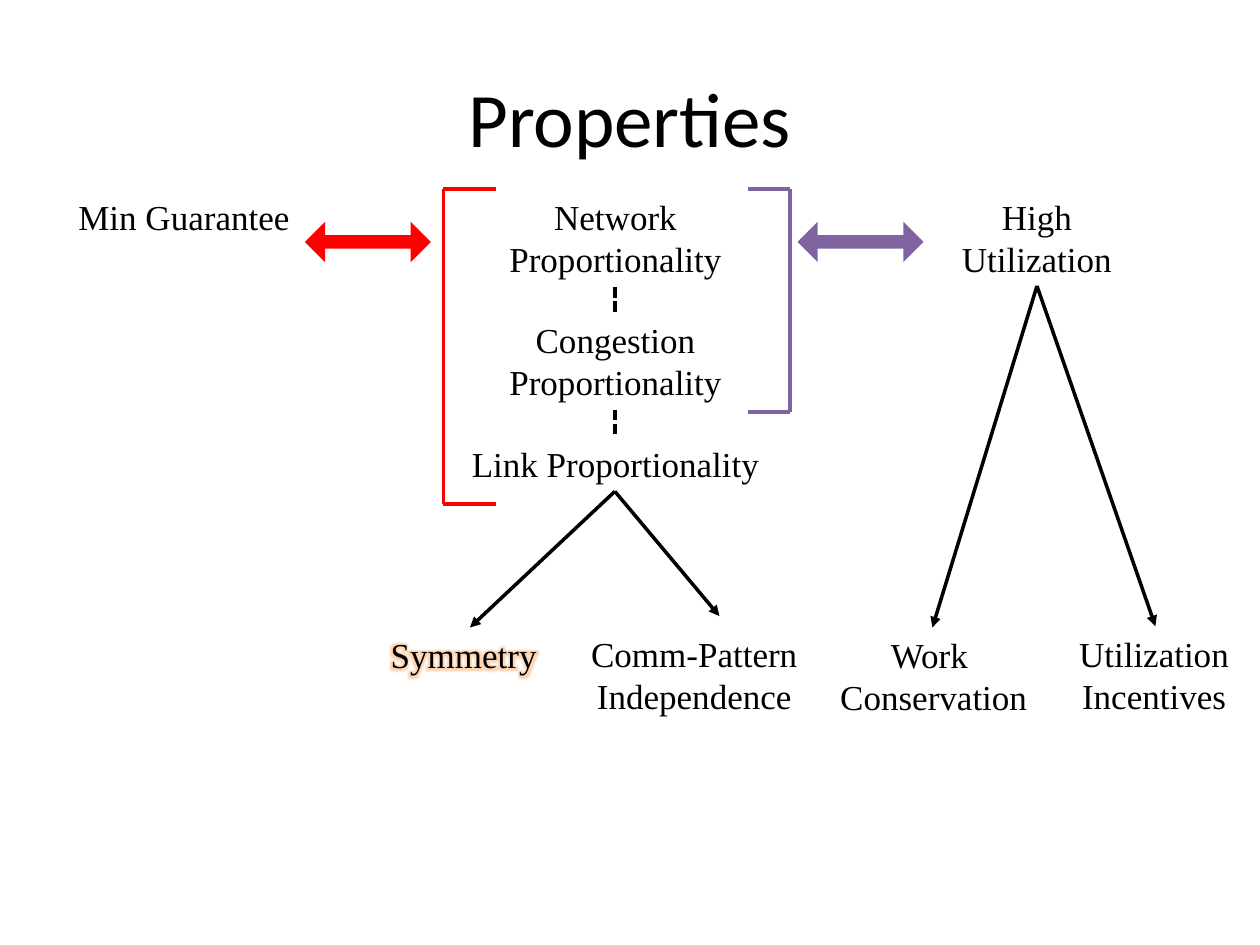
from dataclasses import dataclass

from lxml import etree
from pptx import Presentation
from pptx import util as u
from pptx.dml.color import RGBColor
from pptx.enum import dml, shapes, text
from pptx.oxml import parse_xml
from pptx.oxml.ns import qn

# Grid of 10 columns by 7.5 rows, one inch per cell
COLS, ROWS = 10, 7.5
BLACK, RED, VIOLET, GLOW = "000000", "FF0000", "8064A2", "F79646"
SERIF = {"name": "Times New Roman", "size": u.Pt(20)}
HEAD = {"name": "Calibri", "size": u.Pt(44)}
MID = 4.88  # centre column of the proportionality chain
TOP = 1.5   # row where the first level starts
LEAF = 4.98  # row of the bottom level
TALL, LOW = 0.77, 0.44  # heights of two-line and one-line labels


@dataclass
class Label:
    words: str
    col: float
    row: float
    wide: float
    high: float = TALL
    wrap: bool = True
    glow: bool = False


@dataclass
class Link:
    start: tuple[float, float]
    end: tuple[float, float]
    hue: str = BLACK
    arrow: bool = False
    dash: bool = False


@dataclass
class Bracket:
    spine: float
    tip: float
    base: float
    hue: str


def tint(hue: str) -> RGBColor:
    return RGBColor.from_string(hue)


def add_glow(run) -> None:
    halo = parse_xml(
        '<a:effectLst xmlns:a="http://schemas.openxmlformats.org/drawingml/2006/main">'
        f'<a:glow rad="101600"><a:srgbClr val="{GLOW}"><a:alpha val="40000"/>'
        "</a:srgbClr></a:glow></a:effectLst>")
    run.font._element.find(qn("a:solidFill")).addnext(halo)


def add_label(slide, item: Label, style: dict, anchor=text.MSO_ANCHOR.TOP) -> None:
    box = slide.shapes.add_textbox(*map(u.Inches, (item.col, item.row, item.wide, item.high)))
    frame = box.text_frame
    frame.word_wrap, frame.vertical_anchor = item.wrap, anchor
    frame.text = item.words
    for para in frame.paragraphs:
        para.alignment = text.PP_ALIGN.CENTER
        for run in para.runs:
            for key, value in style.items():
                setattr(run.font, key, value)
            run.font.color.rgb = tint(BLACK)
            if item.glow:
                add_glow(run)


def add_link(slide, item: Link) -> None:
    wire = slide.shapes.add_connector(
        shapes.MSO_CONNECTOR.STRAIGHT, *map(u.Inches, item.start + item.end))
    wire.line.color.rgb, wire.line.width = tint(item.hue), u.Pt(2)
    if item.dash:
        wire.line.dash_style = dml.MSO_LINE.SQUARE_DOT
    props = wire._element.spPr
    if item.arrow:
        etree.SubElement(props.find(qn("a:ln")), qn("a:tailEnd"), type="triangle")
    etree.SubElement(props, qn("a:effectLst"))


def add_bracket(slide, item: Bracket) -> None:
    for row in (TOP, item.base):
        add_link(slide, Link((item.tip, row), (item.spine, row), item.hue))
    add_link(slide, Link((item.spine, TOP), (item.spine, item.base), item.hue))


def add_arrow(slide, col: float, hue: str) -> None:
    shape = slide.shapes.add_shape(
        shapes.MSO_SHAPE.LEFT_RIGHT_ARROW, *map(u.Inches, (col, 1.76, 1, 0.32)))
    shape.shadow.inherit = False
    shape.adjustments[0], shape.adjustments[1] = 0.33, 0.5
    shape.fill.solid()
    shape.fill.fore_color.rgb = tint(hue)
    shape.line.fill.background()


TITLE = Label("Properties", 0.5, 0.3, COLS - 1, 1.25)
LABELS = [
    # First level and the chain below it
    Label("Min Guarantee", 0.5, TOP, 1.92),
    Label("Network Proportionality", 3.5, TOP, 2.77),
    Label("High Utilization", 7.25, TOP, 1.96),
    Label("Congestion Proportionality", 3.5, 2.48, 2.77),
    Label("Link Proportionality", 3.52, 3.46, 2.73, LOW),
    # Bottom level
    Label("Symmetry", 3, LEAF, 1.36, LOW, False, True),
    Label("Comm-Pattern\nIndependence", 4.5, 4.97, 2.02, wrap=False),
    Label("Work \nConservation", 6.42, LEAF, 1.98),
    Label("Utilization\nIncentives", 8.43, 4.97, 1.46, wrap=False),
]
BRACKETS = [Bracket(3.52, 3.94, 4, RED), Bracket(6.27, 5.94, 3.27, VIOLET)]
ARROWS = [(2.42, RED), (6.33, VIOLET)]
# Each parent point with the points its arrows reach
TREES = {
    (MID, 3.9): [(3.73, LEAF), (5.71, 4.89)],
    (8.23, 2.27): [(7.4, LEAF), (9.17, 4.97)],
}
STEPS = [(2.28, 2.48), (3.25, 3.46)]  # dashed gaps in the chain


def main() -> None:
    deck = Presentation()
    deck.slide_width, deck.slide_height = u.Inches(COLS), u.Inches(ROWS)
    slide = deck.slides.add_slide(deck.slide_layouts[6])
    add_label(slide, TITLE, HEAD, text.MSO_ANCHOR.MIDDLE)
    for bracket in BRACKETS:
        add_bracket(slide, bracket)
    for col, hue in ARROWS:
        add_arrow(slide, col, hue)
    for label in LABELS:
        add_label(slide, label, SERIF)
    for root, leaves in TREES.items():
        for leaf in leaves:
            add_link(slide, Link(root, leaf, arrow=True))
    for start, end in STEPS:
        add_link(slide, Link((MID, start), (MID, end), dash=True))
    deck.save("out.pptx")


if __name__ == "__main__":
    main()
